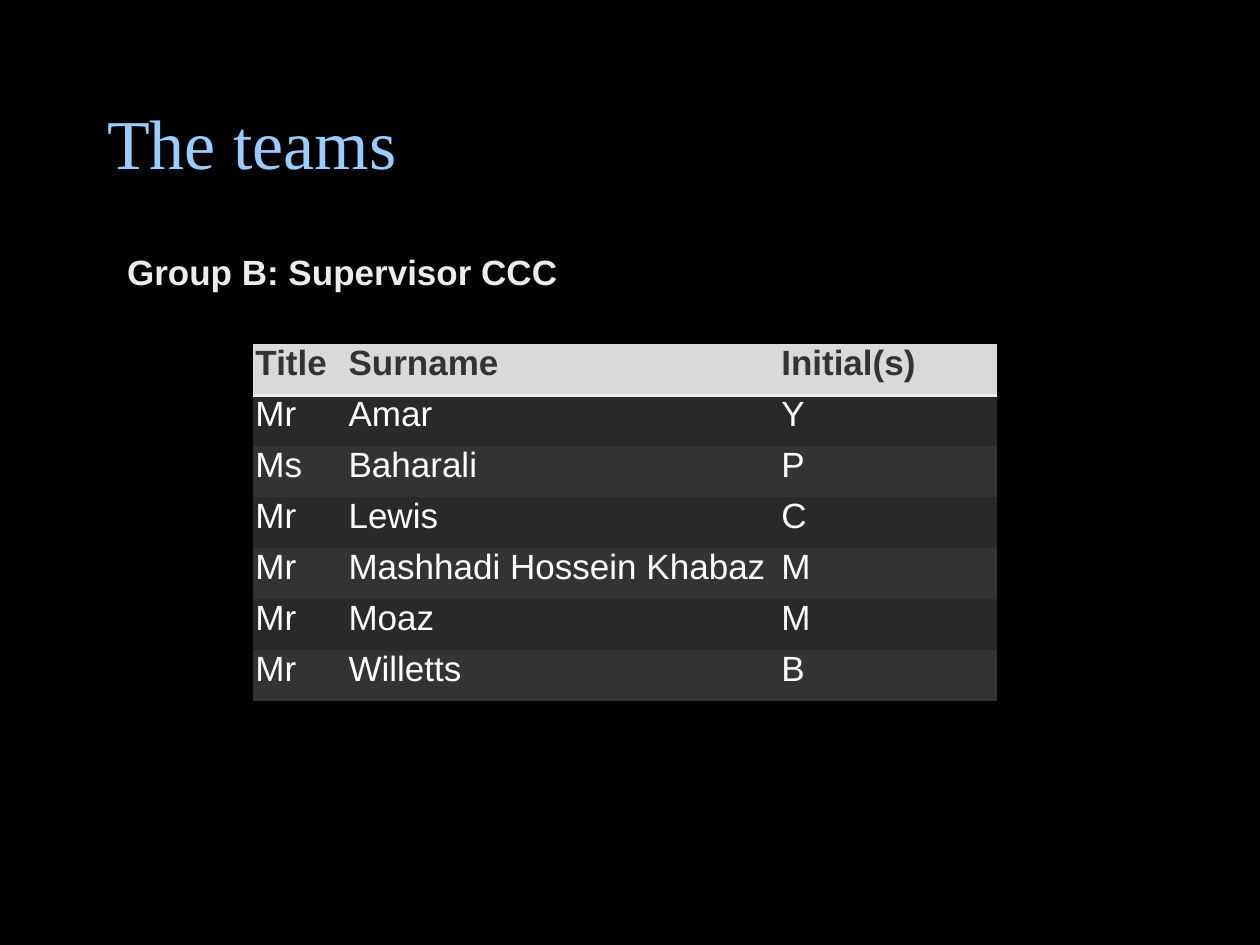
import lxml.etree
import pptx
import pptx.dml.color
import pptx.enum.text
import pptx.oxml.ns
import pptx.util

Pt = pptx.util.Pt

TITLE = "The teams"
GROUP = "Group B: Supervisor CCC"
HEADER = ("Title", "Surname", "Initial(s)")
MEMBERS = [
    ("Mr", "Amar", "Y"),
    ("Ms", "Baharali", "P"),
    ("Mr", "Lewis", "C"),
    ("Mr", "Mashhadi Hossein Khabaz", "M"),
    ("Mr", "Moaz", "M"),
    ("Mr", "Willetts", "B"),
]

THEME = {
    "background": "000000",
    "title": "99CCFF",
    "group": "ECECEC",
    "header_text": "333333",
    "header_fill": "D9D9D9",
    "header_rule": "ECECEC",
    "body_text": "FFFFFF",
    "bands": ("292929", "333333"),
    "title_font": "Times New Roman",
    "body_font": "Arial",
    "title_size": 40,
    "body_size": 20,
}

TITLE_BOX = (54, 36, 612, 90)
GROUP_BOX = (65.5, 139.5, 289.5, 31.5)
TABLE_LEFT, TABLE_TOP = 144.5, 196.6
COLUMN_WIDTHS = (53.2, 247.3, 124.7)
ROW_HEIGHT = 29.15
CELL_INSET = 1.5
RULE_WIDTH = 2
PLAIN_TABLE_STYLE = "{2D5ABB26-0587-4C30-8999-92F81FD0307C}"


def rgb(name):
    return pptx.dml.color.RGBColor.from_string(name)


def write(text_frame, text, color, font=THEME["body_font"], size=THEME["body_size"], bold=False):
    text_frame.text = text
    paragraph = text_frame.paragraphs[0]
    paragraph.alignment = pptx.enum.text.PP_ALIGN.LEFT
    run_font = paragraph.runs[0].font
    run_font.name = font
    run_font.size = Pt(size)
    run_font.bold = bold
    run_font.color.rgb = rgb(color)


def add_bottom_border(cell, color):
    qn = pptx.oxml.ns.qn
    line = lxml.etree.Element(qn("a:lnB"), w=str(Pt(RULE_WIDTH)))
    fill = lxml.etree.SubElement(line, qn("a:solidFill"))
    lxml.etree.SubElement(fill, qn("a:srgbClr"), val=color)
    cell._tc.get_or_add_tcPr().insert(0, line)


def add_title(slide):
    title = slide.shapes.title
    title.left, title.top, title.width, title.height = map(Pt, TITLE_BOX)
    title.text_frame.vertical_anchor = pptx.enum.text.MSO_ANCHOR.MIDDLE
    write(title.text_frame, TITLE, THEME["title"], THEME["title_font"], THEME["title_size"])


def add_group_label(slide):
    text_frame = slide.shapes.add_textbox(*map(Pt, GROUP_BOX)).text_frame
    text_frame.word_wrap = True
    text_frame.auto_size = pptx.enum.text.MSO_AUTO_SIZE.SHAPE_TO_FIT_TEXT
    write(text_frame, GROUP, THEME["group"], bold=True)


def add_member_table(slide):
    rows = [HEADER, *MEMBERS]
    table = slide.shapes.add_table(
        len(rows), len(HEADER), Pt(TABLE_LEFT), Pt(TABLE_TOP),
        Pt(sum(COLUMN_WIDTHS)), Pt(ROW_HEIGHT * len(rows)),
    ).table
    table._tbl.tblPr.find(pptx.oxml.ns.qn("a:tableStyleId")).text = PLAIN_TABLE_STYLE
    table.horz_banding = False
    for column, width in zip(table.columns, COLUMN_WIDTHS):
        column.width = Pt(width)
    for row_index, values in enumerate(rows):
        table.rows[row_index].height = Pt(ROW_HEIGHT)
        is_header = row_index == 0
        fill = THEME["header_fill"] if is_header else THEME["bands"][(row_index - 1) % 2]
        color = THEME["header_text"] if is_header else THEME["body_text"]
        for column_index, value in enumerate(values):
            cell = table.cell(row_index, column_index)
            cell.margin_left = cell.margin_right = Pt(CELL_INSET)
            cell.margin_top = cell.margin_bottom = 0
            cell.fill.solid()
            cell.fill.fore_color.rgb = rgb(fill)
            write(cell.text_frame, value, color, bold=is_header)
            if is_header:
                add_bottom_border(cell, THEME["header_rule"])


def main():
    presentation = pptx.Presentation()
    presentation.slide_width, presentation.slide_height = Pt(720), Pt(540)
    slide = presentation.slides.add_slide(presentation.slide_layouts.get_by_name("Title Only"))
    slide.background.fill.solid()
    slide.background.fill.fore_color.rgb = rgb(THEME["background"])
    add_title(slide)
    add_group_label(slide)
    add_member_table(slide)
    presentation.save("out.pptx")


if __name__ == "__main__":
    main()
